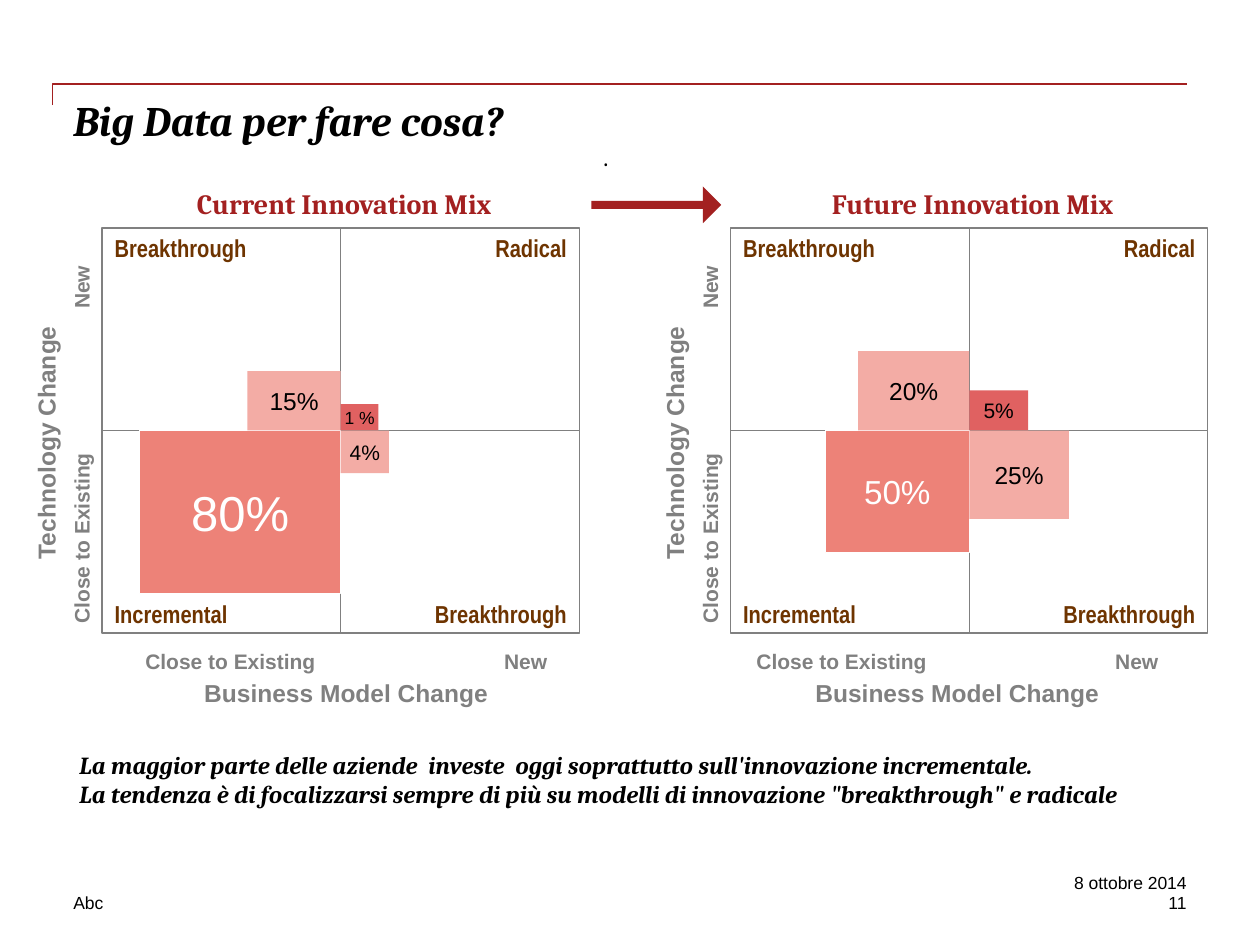
from dataclasses import dataclass

from pptx import Presentation
from pptx import util as u
from pptx.dml.color import RGBColor
from pptx.enum import shapes, text

LEFT, CENTER, RIGHT = text.PP_ALIGN.LEFT, text.PP_ALIGN.CENTER, text.PP_ALIGN.RIGHT
TOP, MIDDLE, BOTTOM = (text.MSO_ANCHOR.TOP, text.MSO_ANCHOR.MIDDLE,
                       text.MSO_ANCHOR.BOTTOM)


@dataclass(frozen=True)
class Theme:
    serif: str = "Cambria"
    sans: str = "Arial"
    narrow: str = "Arial Narrow"
    accent: str = "A32020"
    black: str = "000000"
    white: str = "FFFFFF"
    grey: str = "808080"
    brown: str = "6E3400"
    coral: str = "ED8278"
    pink: str = "F3ACA5"
    red: str = "E06161"
    title: int = 24
    heading: int = 16
    body: int = 14
    axis: int = 12
    footer: int = 10


@dataclass(frozen=True)
class Font:
    face: str
    size: float
    color: str
    bold: bool = False
    italic: bool = False


THEME = Theme()
AXIS_NAME = Font(THEME.sans, THEME.body, THEME.grey, bold=True)
AXIS_END = Font(THEME.sans, THEME.axis, THEME.grey, bold=True)
HEADING = Font(THEME.serif, THEME.heading, THEME.accent, bold=True)
QUADRANT = Font(THEME.narrow, THEME.body, THEME.brown, bold=True)
FOOTER = Font(THEME.sans, THEME.footer, THEME.black)
MESSAGE = Font(THEME.serif, THEME.body, THEME.black, bold=True, italic=True)

# Name, column, row
QUADRANTS = [("Breakthrough", 0, 0), ("Radical", 1, 0),
             ("Incremental", 0, 1), ("Breakthrough", 1, 1)]
CELL_W, CELL_H, GRID_TOP = 4.81, 4.08, 4.6

# Each share: label, type size, fill, column, row, width, height
MIXES = [
    dict(heading="Current Innovation Mix", left=2.06, axis_left=2.68, shares=[
        ("80%", 28, THEME.coral, 0, 1, 4.06, 3.28),
        ("15%", 14, THEME.pink, 0, 0, 1.88, 1.2),
        ("1 %", 10, THEME.red, 1, 0, 0.76, 0.53),
        ("4%", 12, THEME.pink, 1, 1, 0.97, 0.86)]),
    dict(heading="Future Innovation Mix", left=14.73, axis_left=15, shares=[
        ("50%", 19, THEME.coral, 0, 1, 2.9, 2.46),
        ("20%", 14, THEME.pink, 0, 0, 2.24, 1.6),
        ("5%", 12, THEME.red, 1, 0, 1.19, 0.81),
        ("25%", 14, THEME.pink, 1, 1, 2.01, 1.78)]),
]


class SlideBuilder:
    """Draws styled elements on one slide; all lengths are centimetres."""

    def __init__(self, slide, theme):
        self.slide = slide
        self.theme = theme

    def set_text(self, shape, lines, font, align=LEFT, anchor=TOP,
                 inset=(0.25, 0.13), wrap=True, spacing=None):
        frame = shape.text_frame
        frame.word_wrap = wrap
        frame.vertical_anchor = anchor
        frame.margin_left = frame.margin_right = u.Cm(inset[0])
        frame.margin_top = frame.margin_bottom = u.Cm(inset[1])
        for number, line in enumerate(lines):
            paragraph = frame.add_paragraph() if number else frame.paragraphs[0]
            paragraph.alignment = align
            if spacing:
                paragraph.line_spacing = spacing
            run = paragraph.add_run()
            run.text = line
            run.font.name = font.face
            run.font.size = u.Pt(font.size)
            run.font.bold = font.bold
            run.font.italic = font.italic
            run.font.color.rgb = RGBColor.from_string(font.color)

    def label(self, box, lines, font, **layout):
        shape = self.slide.shapes.add_textbox(*map(u.Cm, box))
        self.set_text(shape, lines, font, **layout)
        return shape

    def block(self, kind, box, fill, line=None, width=0.75):
        shape = self.slide.shapes.add_shape(kind, *map(u.Cm, box))
        shape.shadow.inherit = False
        shape.fill.solid()
        shape.fill.fore_color.rgb = RGBColor.from_string(fill)
        if line:
            shape.line.color.rgb = RGBColor.from_string(line)
            shape.line.width = u.Pt(width)
        else:
            shape.line.fill.background()
        return shape

    def rule(self, points):
        """Open line through the points."""
        start, *rest = [(u.Cm(x), u.Cm(y)) for x, y in points]
        outline = self.slide.shapes.build_freeform(*start)
        outline.add_line_segments(rest, close=False)
        shape = outline.convert_to_shape()
        shape.shadow.inherit = False
        shape.fill.background()
        shape.line.color.rgb = RGBColor.from_string(self.theme.accent)
        shape.line.width = u.Pt(1)

    def axes(self, left, axis_left):
        technology = self.label((left - 4.8, 8.53, 7.4, 0.79),
                                ["Technology Change"], AXIS_NAME,
                                align=CENTER, spacing=0.9)
        technology.rotation = 270
        half = 4.3
        for name, align, x, y, height in [
                ("Close to Existing", LEFT, axis_left, 8.94, 3.76),
                ("New", RIGHT, axis_left + half, 5.23, 3.68)]:
            self.label((x, 13, half, 0.71), [name], AXIS_END,
                       align=align, spacing=0.9)
            upright = self.label((left - 0.87, y, 0.97, height), [name],
                                 AXIS_END, align=align, spacing=0.9)
            upright.text_frame._txBody.bodyPr.set("vert", "vert270")
        self.label((axis_left, 13.61, 2 * half, 0.79),
                   ["Business Model Change"], AXIS_NAME,
                   align=CENTER, spacing=0.9)

    def mix(self, heading, left, axis_left, shares):
        """Two-by-two grid with share blocks meeting at its centre."""
        self.label((left + 0.58, 3.63, 8.6, 0.94), [heading], HEADING,
                   align=CENTER)
        self.axes(left, axis_left)
        rectangle = shapes.MSO_SHAPE.RECTANGLE
        for name, column, row in QUADRANTS:
            cell = self.block(rectangle, (left + column * CELL_W,
                                          GRID_TOP + row * CELL_H,
                                          CELL_W, CELL_H),
                              self.theme.white, self.theme.grey)
            self.set_text(cell, [name], QUADRANT, align=(LEFT, RIGHT)[column],
                          anchor=(TOP, BOTTOM)[row], inset=(0.25, 0.1),
                          wrap=False)
        center_x, center_y = left + CELL_W, GRID_TOP + CELL_H
        for name, size, fill, column, row, width, height in shares:
            main_share = fill == self.theme.coral
            box = (center_x - (1 - column) * width,
                   center_y - (1 - row) * height, width, height)
            share = self.block(rectangle, box, fill,
                               self.theme.white if main_share else None, 0.5)
            color = self.theme.white if main_share else self.theme.black
            self.set_text(share, [name], Font(self.theme.sans, size, color),
                          align=CENTER, anchor=MIDDLE, inset=(0, 0), wrap=False)


def main():
    deck = Presentation()
    deck.slide_width, deck.slide_height = u.Cm(25.4), u.Cm(19.05)
    page = SlideBuilder(deck.slides.add_slide(deck.slide_layouts[6]), THEME)

    page.rule([(1.06, 2.12), (1.06, 1.69), (23.92, 1.69)])
    page.label((1.48, 1.9, 22.44, 1.76), ["Big Data per fare cosa?"],
               Font(THEME.serif, THEME.title, THEME.black, True, True),
               inset=(0, 0))
    arrow = page.block(shapes.MSO_SHAPE.RIGHT_ARROW, (11.92, 3.76, 2.62, 0.74),
                       THEME.accent)
    arrow.adjustments[0] = 0.22
    for mix in MIXES:
        page.mix(**mix)
    page.label((1.24, 2.74, 21.95, 2.57), ["."],
               Font(THEME.serif, THEME.body, THEME.black), align=CENTER)
    page.label((1.35, 14.99, 24.05, 1.8), [
        "La maggior parte delle aziende  investe  oggi soprattutto "
        "sull'innovazione incrementale.",
        "La tendenza è di focalizzarsi sempre di più su modelli di "
        "innovazione \"breakthrough\" e radicale"], MESSAGE)
    for line, x, y, width, align in [("Abc", 1.48, 17.98, 7.2, LEFT),
                                     ("11", 19.69, 17.98, 4.23, RIGHT),
                                     ("8 ottobre 2014", 19.69, 17.57, 4.23, RIGHT)]:
        page.label((x, y, width, 0.42), [line], FOOTER, align=align, inset=(0, 0))
    deck.save("out.pptx")


if __name__ == "__main__":
    main()
